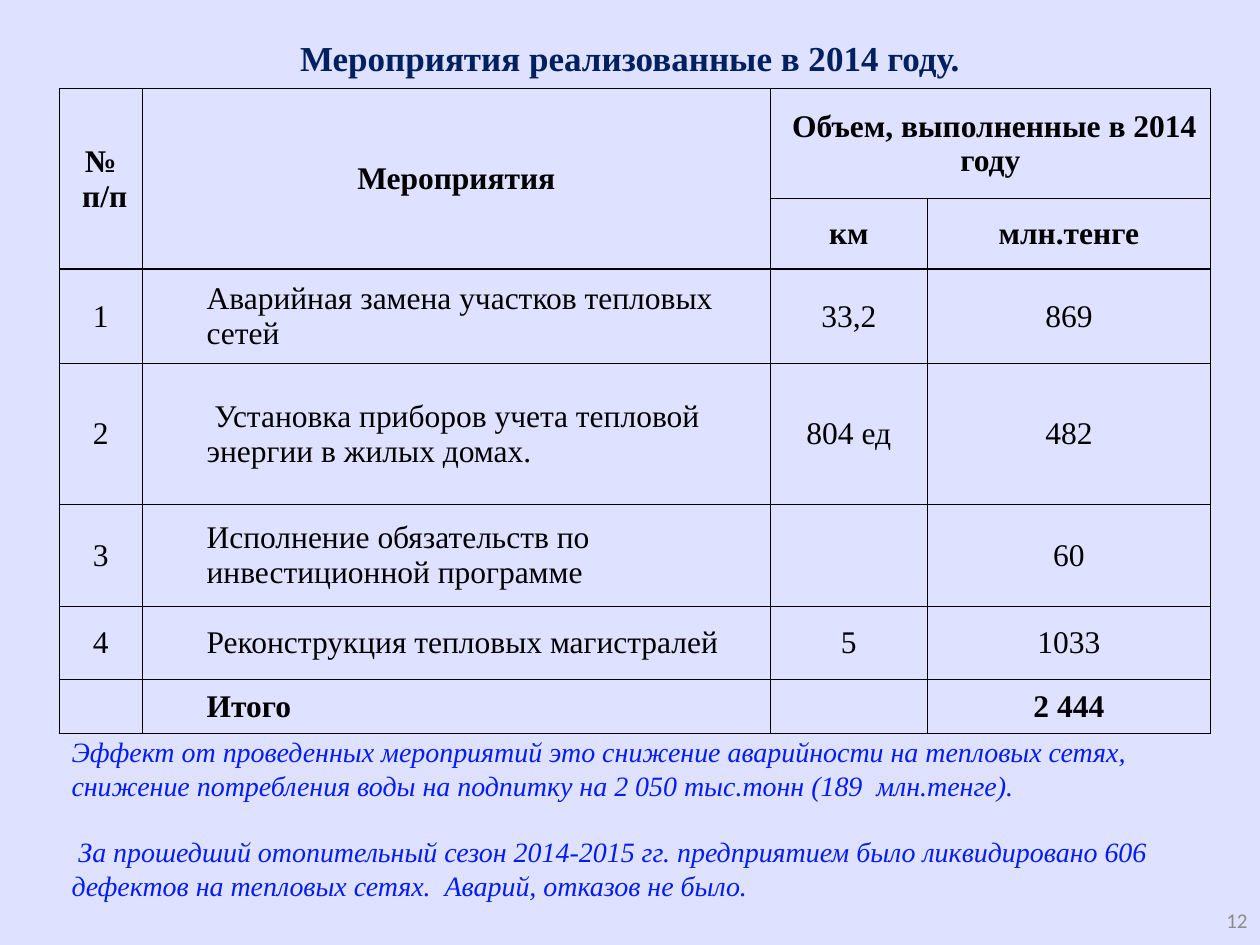
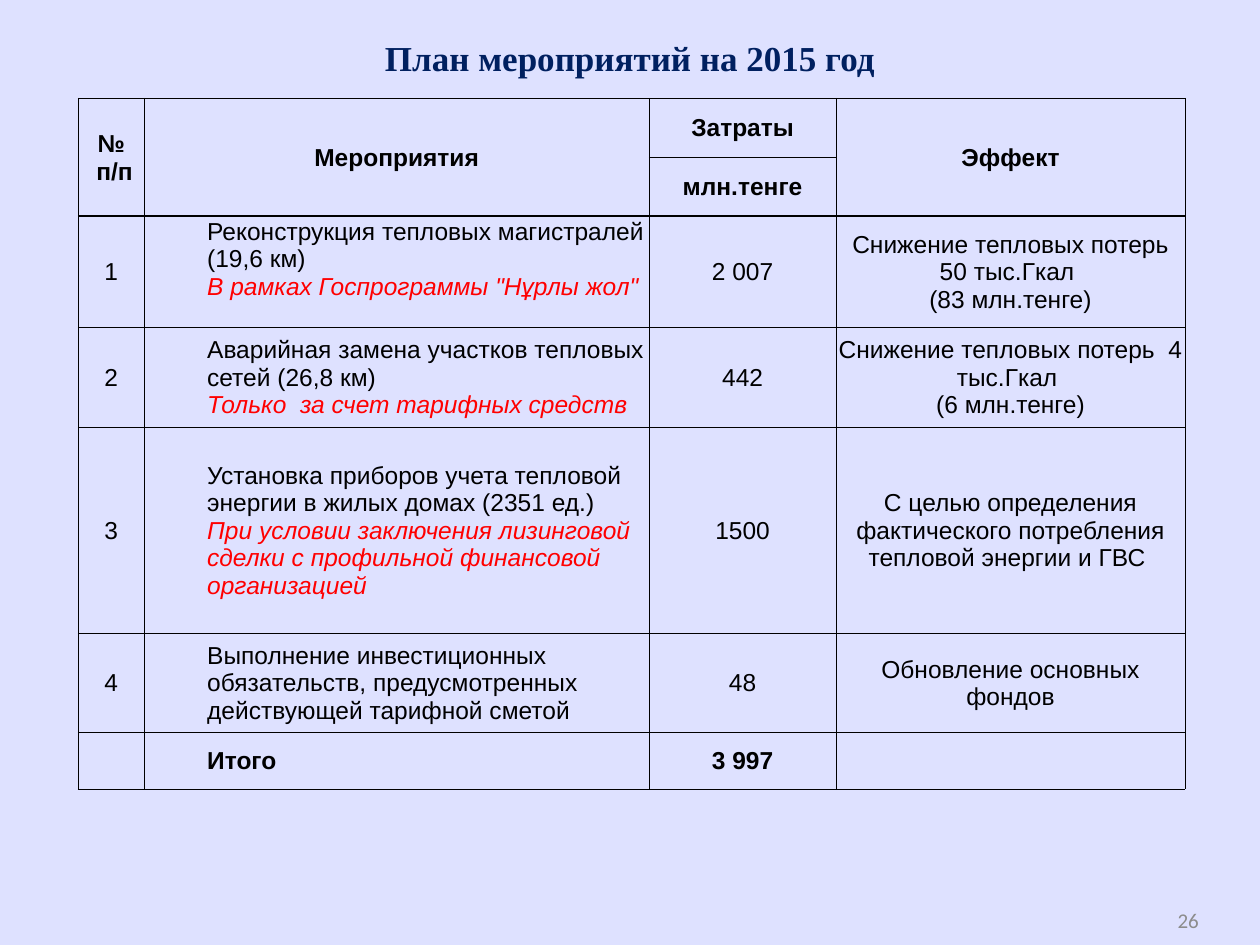
from lxml import etree
from pptx import Presentation
from pptx.dml.color import RGBColor as RGB
from pptx.enum.text import MSO_ANCHOR as ANCHOR, PP_ALIGN as ALIGN
from pptx.oxml.ns import qn
from pptx.util import Pt

COLORS = {
    "back": "DEE1FF",
    "title": "002060",
    "text": "000000",
    "remark": "FF0000",
    "effect": "041CFC",
    "number": "8C8C8C",
}
SERIF, SANS, NUMBER_FONT = "Times New Roman", "Arial", "Calibri"
HEADER_ROWS = 2
NAME_COL = 1
THIN, THICK = 0.5, 1

DONE_ROWS = [
    ["№\n п/п", "Мероприятия", " Объем, выполненные в 2014 году", ""],
    ["", "", "км", "млн.тенге"],
    ["1", "Аварийная замена участков тепловых сетей", "33,2", "869"],
    ["2", " Установка приборов учета тепловой энергии в жилых домах.", "804 ед", "482"],
    ["3", "Исполнение обязательств по инвестиционной программе", "", "60"],
    ["4", "Реконструкция тепловых магистралей", "5", "1033"],
    ["", "Итого", "", "2 444"],
]
PLAN_ROWS = [
    ["№\n п/п", "Мероприятия", "Затраты", "Эффект"],
    ["", "", "млн.тенге", ""],
    ["1", "Реконструкция тепловых магистралей (19,6 км)\n"
          "В рамках Госпрограммы \"Нұрлы жол\"",
     "2 007", "Снижение тепловых потерь 50 тыс.Гкал \n(83 млн.тенге)"],
    ["2", "Аварийная замена участков тепловых сетей (26,8 км)\n"
          "Только  за счет тарифных средств",
     "442", "Снижение тепловых потерь  4 тыс.Гкал \n(6 млн.тенге)"],
    ["3", "Установка приборов учета тепловой энергии в жилых домах (2351 ед.)\n"
          "При условии заключения лизинговой сделки с профильной финансовой "
          "организацией",
     "1500", "С целью определения фактического потребления тепловой энергии и ГВС "],
    ["4", "Выполнение инвестиционных обязательств, предусмотренных "
          "действующей тарифной сметой",
     "48", "Обновление основных фондов"],
    ["", "Итого", "3 997", ""],
]
EFFECTS = [
    "Эффект от проведенных мероприятий это снижение аварийности на тепловых сетях, "
    "снижение потребления воды на подпитку на 2 050 тыс.тонн (189  млн.тенге).",
    " За прошедший отопительный сезон 2014-2015 гг. предприятием было ликвидировано 606 "
    "дефектов на тепловых сетях.  Аварий, отказов не было.",
]


class Deck:
    """Holds the shared style and the current slide."""

    def __init__(self):
        self.prs = Presentation()
        self.prs.slide_width, self.prs.slide_height = Pt(720), Pt(540)
        fill = self.prs.slide_master.background.fill
        fill.solid()
        fill.fore_color.rgb = RGB.from_string(COLORS["back"])

    def run(self, p, text, size, font, color, bold=False, italic=False):
        r = p.add_run()
        r.text = text
        f = r.font
        f.size, f.name, f.bold, f.italic = Pt(size), font, bold, italic
        f.color.rgb = RGB.from_string(COLORS[color])

    def slide(self, title):
        self.s = self.prs.slides.add_slide(self.prs.slide_layouts[5])
        sp = self.s.shapes.title
        sp.left, sp.top, sp.width, sp.height = Pt(0), Pt(0), Pt(720), Pt(66)
        tf = sp.text_frame
        tf.vertical_anchor = ANCHOR.MIDDLE
        p = tf.paragraphs[0]
        p.alignment = ALIGN.CENTER
        self.run(p, title, 20, SERIF, "title", bold=True)

    def text_box(self, left, top, width, height):
        tf = self.s.shapes.add_textbox(Pt(left), Pt(top), Pt(width), Pt(height)).text_frame
        tf.word_wrap = True
        return tf

    def number(self, text, left, align):
        tf = self.text_box(left, 511.2, 720 - left, 28.8)
        tf.vertical_anchor = ANCHOR.MIDDLE
        p = tf.paragraphs[0]
        p.alignment = align
        self.run(p, text, 12, NUMBER_FONT, "number")

    def effects(self, texts, left, top, width, height):
        tf = self.text_box(left, top, width, height)
        for i, text in enumerate(texts):
            p = tf.paragraphs[0] if i == 0 else tf.add_paragraph()
            p.space_before = Pt(19 if i else 0)
            self.run(p, text, 16, SERIF, "effect", italic=True)

    def borders(self, cell, bottom, top):
        tcPr = cell._tc.get_or_add_tcPr()
        for side, width in (("L", THIN), ("R", THIN), ("T", top), ("B", bottom)):
            ln = etree.SubElement(tcPr, qn("a:ln" + side), w=str(Pt(width)))
            fill = etree.SubElement(ln, qn("a:solidFill"))
            etree.SubElement(fill, qn("a:srgbClr"), val=COLORS["text"])

    def cell(self, cell, text, row, col, size, font, bold):
        last_row = row + (cell.span_height if cell.is_merge_origin else 1)
        self.borders(cell, THICK if last_row == HEADER_ROWS else THIN,
                     THICK if row == HEADER_ROWS else THIN)
        cell.fill.background()
        cell.vertical_anchor = ANCHOR.MIDDLE
        cell.margin_left = cell.margin_right = cell.margin_top = Pt(0.7)
        cell.margin_bottom = Pt(0)
        is_name = col == NAME_COL and row >= HEADER_ROWS
        for i, line in enumerate(text.split("\n") if text else []):
            tf = cell.text_frame
            p = tf.paragraphs[0] if i == 0 else tf.add_paragraph()
            p.alignment = ALIGN.LEFT if is_name else ALIGN.CENTER
            if is_name:
                pPr = p._p.get_or_add_pPr()
                pPr.set("marL", str(Pt(36)))
                pPr.set("indent", "0")
            remark = is_name and i > 0
            self.run(p, line, size, font, "remark" if remark else "text", bold, remark)

    def table(self, rows, left, top, widths, heights, merges, size, font):
        frame = self.s.shapes.add_table(len(rows), len(widths), Pt(left), Pt(top),
                                        Pt(sum(widths)), Pt(sum(heights)))
        tbl = frame.table
        tbl.first_row = tbl.horz_banding = False
        for column, width in zip(tbl.columns, widths):
            column.width = Pt(width)
        for row, height in zip(tbl.rows, heights):
            row.height = Pt(height)
        for first, last in merges:
            tbl.cell(*first).merge(tbl.cell(*last))
        for i, row in enumerate(rows):
            bold = i < HEADER_ROWS or i == len(rows) - 1
            for j, text in enumerate(row):
                self.cell(tbl.cell(i, j), text, i, j, size, font, bold)
        return tbl


def main():
    deck = Deck()
    number_merge, name_merge = ((0, 0), (1, 0)), ((0, 1), (1, 1))

    deck.slide("Мероприятия реализованные в 2014 году.")
    deck.table(DONE_ROWS, 33.8, 50.4, [47.6, 358.8, 89.8, 161.8],
               [62.8, 40.6, 53.7, 80.6, 58.2, 41.8, 30.8],
               [number_merge, name_merge, ((0, 2), (0, 3))], 18, SERIF)
    deck.effects(EFFECTS, 33.8, 416.2, 663.8, 123.8)
    deck.number("12", 552.2, ALIGN.RIGHT)

    deck.slide("План мероприятий на 2015 год")
    tbl = deck.table(PLAN_ROWS, 44.8, 56.2, [37.6, 288.6, 106.8, 199.4],
                     [33.7, 33.7, 63.4, 57.2, 117.7, 56.6, 32.5],
                     [number_merge, name_merge, ((0, 3), (1, 3))], 14, SANS)
    for i in range(HEADER_ROWS, len(PLAN_ROWS)):
        tbl.cell(i, NAME_COL).margin_left = Pt(0)
        tbl.cell(i, NAME_COL).margin_right = Pt(2.9)
    tbl.cell(HEADER_ROWS, NAME_COL).margin_bottom = Pt(15)
    deck.number("26", 637.9, ALIGN.CENTER)

    deck.prs.save("out.pptx")


if __name__ == "__main__":
    main()
